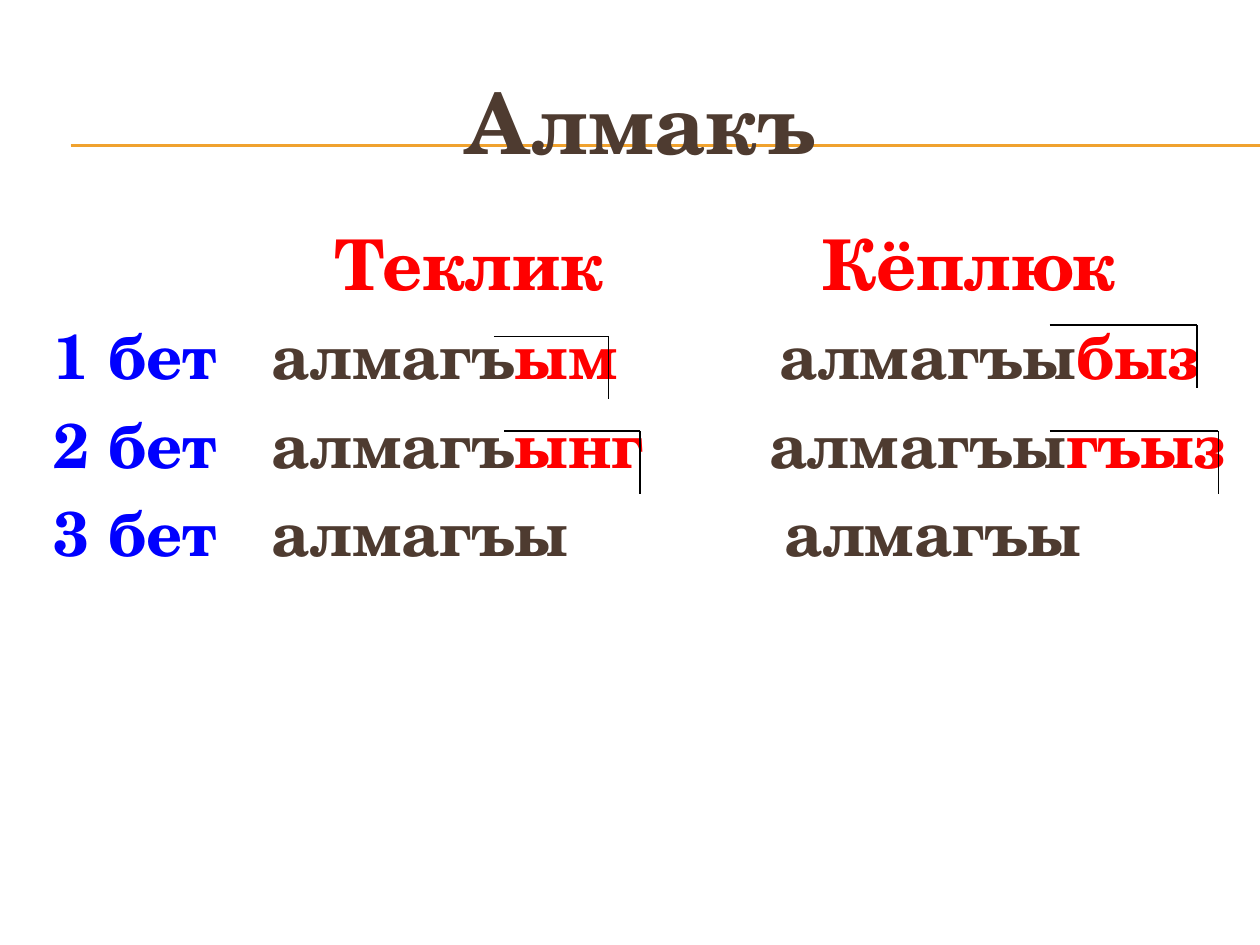
from lxml.etree import SubElement
from pptx import Presentation
from pptx.dml.color import RGBColor
from pptx.enum.shapes import MSO_CONNECTOR
from pptx.enum.text import MSO_ANCHOR, PP_ALIGN
from pptx.oxml.ns import qn
from pptx.util import Inches, Pt

FONT = "TeX Gyre Schola"
BROWN, RED, BLUE, GOLD, BLACK = "4E3B30", "FF0000", "0000FF", "F0A22E", "000000"


def style_run(run, size, color):
    run.font.name = FONT
    run.font.size = Pt(size)
    run.font.bold = True
    run.font.color.rgb = RGBColor.from_string(color)


def add_line(x1, y1, x2, y2, color, width):
    line = slide.shapes.add_connector(
        MSO_CONNECTOR.STRAIGHT, Inches(x1), Inches(y1), Inches(x2), Inches(y2))
    line.line.color.rgb = RGBColor.from_string(color)
    line.line.width = Pt(width)
    SubElement(line._element.spPr, qn("a:effectLst"))
    return line


prs = Presentation()
prs.slide_width, prs.slide_height = Inches(10), Inches(7.5)
slide = prs.slides.add_slide(prs.slide_layouts[5])

# Title
title = slide.shapes.title
title.left, title.top = Inches(0.33), Inches(0.5)
title.width, title.height = Inches(9.5), Inches(0.92)
title.text_frame.text = "Алмакъ"
title.text_frame.vertical_anchor = MSO_ANCHOR.MIDDLE
heading = title.text_frame.paragraphs[0]
heading.alignment = PP_ALIGN.CENTER
style_run(heading.runs[0], 48, BROWN)

# Double rule behind the title
for y in (1.15, 1.16):
    rule = add_line(0.56, y, 10, y, GOLD, 0.75)
    title._element.addprevious(rule._element)

# Paradigm: size, tab stops of the singular and plural columns, coloured parts
rows = [
    (40, (2.23, 6.1), [("\tТеклик\tКёплюк", RED)]),
    (36, (1.73, 5.76), [("1 бет", BLUE), ("\tалмагъ", BROWN), ("ым", RED),
                        ("\tалмагъы", BROWN), ("быз", RED)]),
    (36, (1.73, 5.68), [("2 бет", BLUE), ("\tалмагъ", BROWN), ("ынг", RED),
                        ("\tалмагъы", BROWN), ("гъыз", RED)]),
    (36, (1.73, 5.8), [("3 бет", BLUE), ("\tалмагъы\tалмагъы", BROWN)]),
]
paradigm = slide.shapes.add_textbox(
    Inches(0.33), Inches(1.7), Inches(9.5), Inches(4.95)).text_frame
paradigm.word_wrap = True
paradigm.margin_right = 0
for index, (size, stops, parts) in enumerate(rows):
    row = paradigm.add_paragraph() if index else paradigm.paragraphs[0]
    row.space_before = Pt(size * 0.2)
    tab_list = SubElement(row._p.get_or_add_pPr(), qn("a:tabLst"))
    for stop in stops:
        SubElement(tab_list, qn("a:tab"), pos=str(Inches(stop)), algn="l")
    for text, color in parts:
        run = row.add_run()
        run.text = text
        style_run(run, size, color)

# Suffix marks: a line over the ending and a drop at its right end
for left, right, top in [(3.92, 4.83, 2.67), (8.33, 9.5, 2.58),
                         (4, 5.08, 3.42), (8.33, 9.67, 3.42)]:
    add_line(left, top, right, top, BLACK, 0.79)
    add_line(right, top, right, top + 0.5, BLACK, 0.79)

prs.save("out.pptx")
